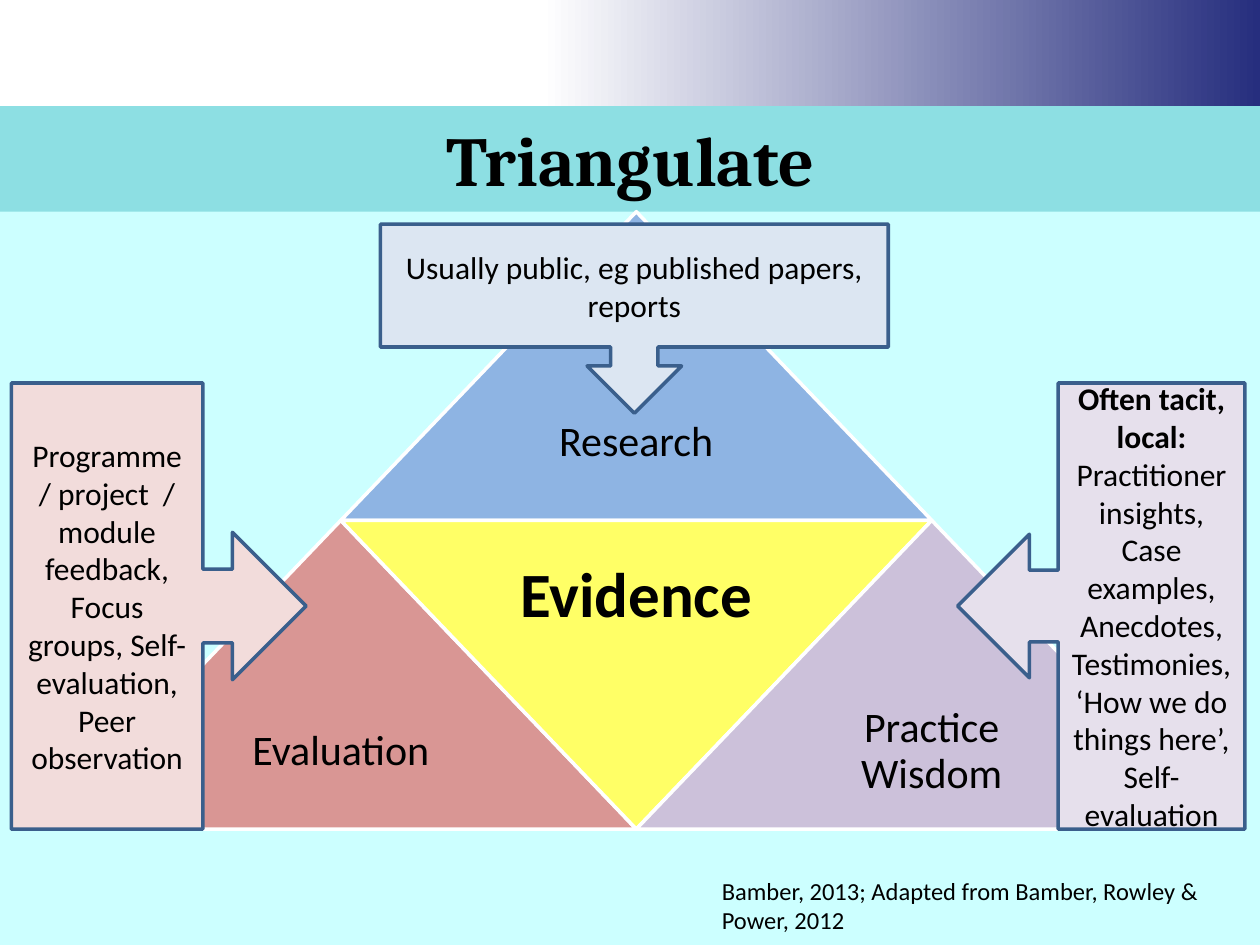
import pptx
import pptx.util
import pptx.dml.color
import pptx.enum.shapes
import pptx.enum.text

Inches = pptx.util.Inches
Pt = pptx.util.Pt
KIND = pptx.enum.shapes.MSO_SHAPE
ALIGN = pptx.enum.text.PP_ALIGN
ANCHOR = pptx.enum.text.MSO_ANCHOR
FIT = pptx.enum.text.MSO_AUTO_SIZE

TITLE = "Triangulate"
CREDIT = "Bamber, 2013; Adapted from Bamber, Rowley & Power, 2012"
WIDE, HIGH = 4.69, 2.45
LEFT, TOP = 0.36, 1.68
PARTS = [
    ("Research", 1, 0, "8EB4E3", False),
    ("Evaluation", 0, 1, "D99694", False),
    ("Evidence", 1, 1, "FFFF66", True),
    ("Practice Wisdom", 2, 1, "CCC1DA", False),
]
NOTES = [
    (KIND.LEFT_ARROW_CALLOUT, (7.6, 3.04, 2.28, 3.54), "E6E0EC", [
        ("Often tacit, local:", True),
        ("Practitioner insights, Case examples, Anecdotes, Testimonies, "
         "‘How we do things here’, Self-evaluation", False)]),
    (KIND.RIGHT_ARROW_CALLOUT, (0.09, 3.04, 2.34, 3.54), "F2DCDB", [
        ("Programme / project  / module feedback, Focus groups, "
         "Self-evaluation, Peer observation", False)]),
    (KIND.DOWN_ARROW_CALLOUT, (3.02, 1.78, 4.03, 1.5), "DCE6F2", [
        ("Usually public, eg published papers, reports", False)]),
]


def paint(color, code):
    color.rgb = pptx.dml.color.RGBColor.from_string(code)


def fill(item, code):
    item.fill.solid()
    paint(item.fill.fore_color, code)


def place(item, box):
    item.left, item.top, item.width, item.height = map(Inches, box)


def write(frame, lines, size, face="Calibri", align=ALIGN.CENTER, gap=None):
    frame.word_wrap = True
    for i, (text, bold) in enumerate(lines):
        para = frame.add_paragraph() if i else frame.paragraphs[0]
        para.text = text
        para.alignment = align
        para.line_spacing = gap
        para.font.size = Pt(size)
        para.font.name = face
        para.font.bold = bold
        paint(para.font.color, "000000")


def draw(slide, kind, box, code, edge):
    item = slide.shapes.add_shape(kind, *map(Inches, box))
    item.shadow.inherit = False
    fill(item, code)
    paint(item.line.color, edge)
    item.line.width = Pt(2)
    return item


def label(slide, text, box, bold):
    frame = slide.shapes.add_textbox(*map(Inches, box)).text_frame
    frame.vertical_anchor = ANCHOR.MIDDLE
    frame.margin_left = frame.margin_right = Inches(0.06)
    frame.margin_top = frame.margin_bottom = Inches(0.06)
    write(frame, [(text, bold)], 36 if bold else 24, gap=0.9)


def main():
    deck = pptx.Presentation()
    deck.slide_width, deck.slide_height = Inches(10), Inches(7.5)
    slide = deck.slides.add_slide(deck.slide_layouts[5])
    fill(slide.background, "CCFFFF")

    band = slide.shapes.add_shape(KIND.RECTANGLE, 0, 0, Inches(10), Inches(0.84))
    band.shadow.inherit = False
    band.line.fill.background()
    band.fill.gradient()
    band.fill.gradient_angle = 180
    stops = [(0, "262E7E"), (0.57, "FFFFFF")]
    for stop, (spot, code) in zip(band.fill.gradient_stops, stops):
        stop.position = spot
        paint(stop.color, code)

    title = slide.shapes.title
    place(title, (0, 0.84, 10, 0.84))
    fill(title, "8DDFE3")
    write(title.text_frame, [(TITLE, True)], 40, "Cambria")
    title.text_frame.vertical_anchor = ANCHOR.MIDDLE
    title.text_frame.auto_size = FIT.NONE

    for text, col, row, code, turned in PARTS:
        x, y = LEFT + col * WIDE / 2, TOP + row * HIGH
        part = draw(slide, KIND.ISOSCELES_TRIANGLE, (x, y, WIDE, HIGH), code, "FFFFFF")
        part.rotation = 180 if turned else 0
        drop = 0 if turned else HIGH / 2
        label(slide, text, (x + WIDE / 4, y + drop, WIDE / 2, HIGH / 2), turned)

    credit = slide.shapes.add_textbox(*map(Inches, (5.63, 6.9, 4.25, 0.57)))
    write(credit.text_frame, [(CREDIT, False)], 14, align=ALIGN.LEFT)

    for kind, box, code, lines in NOTES:
        note = draw(slide, kind, box, code, "3A5F8C")
        note.text_frame.vertical_anchor = ANCHOR.MIDDLE
        write(note.text_frame, lines, 18)

    deck.save("out.pptx")


if __name__ == "__main__":
    main()
